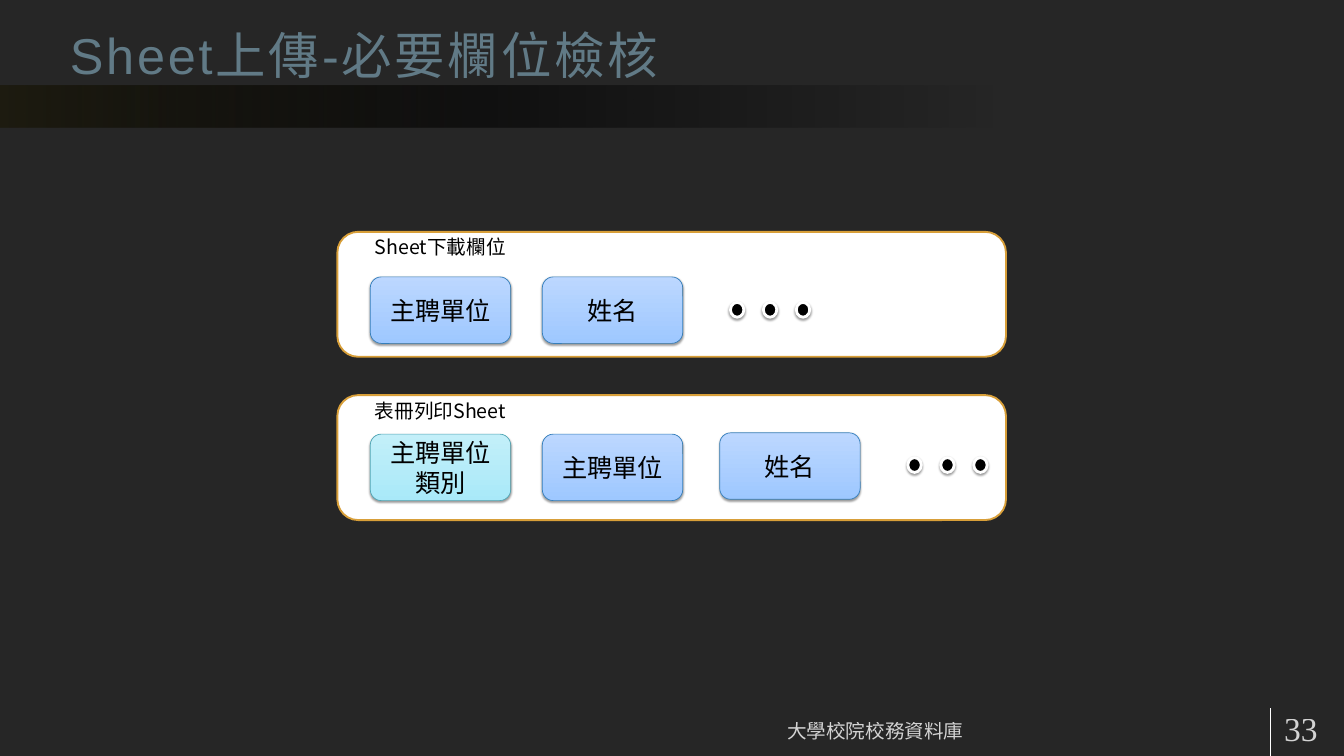
from lxml import etree
from pptx import Presentation
from pptx.dml.color import RGBColor
from pptx.enum.shapes import MSO_CONNECTOR, MSO_SHAPE
from pptx.enum.text import MSO_ANCHOR, MSO_AUTO_SIZE, PP_ALIGN
from pptx.oxml.ns import qn
from pptx.util import Emu, Pt

RECT, ROUND, OVAL = MSO_SHAPE.RECTANGLE, MSO_SHAPE.ROUNDED_RECTANGLE, MSO_SHAPE.OVAL
LINE = MSO_CONNECTOR.STRAIGHT
TOP, MID, LOW = MSO_ANCHOR.TOP, MSO_ANCHOR.MIDDLE, MSO_ANCHOR.BOTTOM
LEFT, MIDDLE = PP_ALIGN.LEFT, PP_ALIGN.CENTER
FIXED = MSO_AUTO_SIZE.NONE

SCALE = 9144
SANS, SERIF, HEAD = "Noto Sans CJK SC", "Times New Roman", "Arial"
WIDE, SLIM = (18, 9), (7, 4)
BLUE = ("9EC8FF", "BCD7FF", "357EB9")
CYAN = ("A9E9F9", "C3EFF9", "53A5B3")


def px(num):
    """Turn px into EMU."""
    return Emu(num * SCALE)


def tint(code):
    """Turn a hex string into a colour."""
    return RGBColor.from_string(code)


def node(root, tag, **attrs):
    """Add a drawing element below root."""
    return etree.SubElement(root, qn(tag), {key: str(val) for key, val in attrs.items()})


def put(item, vals):
    """Set each attribute of item from a dict."""
    for key, val in vals.items():
        setattr(item, key, val)


class Deck:
    """Hold the style and the current slide."""

    def __init__(self, wide, high, back):
        """Start a deck with one title-only slide."""
        self.file = Presentation()
        put(self.file, {"slide_width": px(wide), "slide_height": px(high)})
        self.page = self.file.slides.add_slide(self.file.slide_layouts[5])
        self.page.background.fill.solid()
        self.page.background.fill.fore_color.rgb = tint(back)

    def letter(self, shape, text, size, font, color, anchor=MID, align=MIDDLE, pad=SLIM, alpha=100, space=0):
        """Put styled text into a shape."""
        frame = shape.text_frame
        side, edge = map(px, pad)
        frame.text = text
        put(frame, {"word_wrap": True, "auto_size": FIXED, "vertical_anchor": anchor,
                    "margin_left": side, "margin_right": side,
                    "margin_top": edge, "margin_bottom": edge})
        for para in frame.paragraphs:
            para.alignment = align
            for run in para.runs:
                put(run.font, {"size": Pt(size), "name": font})
                run.font.color.rgb = tint(color)
                props = run.font._element
                node(props, "a:ea", typeface=SANS)
                if space:
                    props.set("spc", str(space * 100))
                if alpha < 100:
                    node(props.find(".//" + qn("a:srgbClr")), "a:alpha", val=alpha * 1000)

    def title(self, area, text, **style):
        """Place and fill the title."""
        shape = self.page.shapes.title
        put(shape, dict(zip(("left", "top", "width", "height"), map(px, area))))
        self.letter(shape, text, **style)

    def label(self, area, text, **style):
        """Add a text box."""
        self.letter(self.page.shapes.add_textbox(*map(px, area)), text, **style)

    def shape(self, kind, area, fill=None, line=None, width=1):
        """Add a preset shape without shadow."""
        shape = self.page.shapes.add_shape(kind, *map(px, area))
        shape.shadow.inherit = False
        if fill:
            shape.fill.solid()
            shape.fill.fore_color.rgb = tint(fill)
        if line:
            shape.line.color.rgb = tint(line)
            shape.line.width = Pt(width)
        else:
            shape.line.fill.background()
        return shape

    def blend(self, shape, stops, angle):
        """Fill a shape with gradient stops of place, colour and alpha."""
        shape.fill.gradient()
        shape.fill.gradient_angle = angle
        group = shape._element.spPr.find(".//" + qn("a:gsLst"))
        for stop in list(group):
            group.remove(stop)
        for place, code, alpha in stops:
            stop = node(group, "a:gs", pos=place * 1000)
            node(node(stop, "a:srgbClr", val=code), "a:alpha", val=alpha * 1000)

    def shade(self, shape):
        """Cast a soft shadow straight down."""
        group = shape._element.spPr.find(qn("a:effectLst"))
        cast = node(group, "a:outerShdw", blurRad=30000, dist=20320, dir=5400000, rotWithShape=0)
        node(node(cast, "a:srgbClr", val="000000"), "a:alpha", val=38000)

    def band(self, area, stops):
        """Add a fading band."""
        self.blend(self.shape(RECT, area), stops, 0)

    def rule(self, left, top, right, low, color, width):
        """Add a thin line."""
        line = self.page.shapes.add_connector(LINE, *map(px, (left, top, right, low)))
        line.line.color.rgb = tint(color)
        line.line.width = Pt(width)
        node(line._element.spPr, "a:effectLst")

    def field(self, left, top, text, hues):
        """Add a column box."""
        low, high, edge = hues
        box = self.shape(ROUND, (left, top, 209, 99), None, edge, 0.75)
        self.blend(box, ((0, low, 100), (100, high, 100)), 90)
        self.shade(box)
        self.letter(box, text, 27, SANS, "000000")

    def dots(self, left, top):
        """Add three dots for further columns."""
        for step in range(3):
            self.shade(self.shape(OVAL, (left + 49 * step, top, 20, 22), "000000", "FFFFFF", 3))

    def panel(self, top, text, drop, fields, dots):
        """Add a panel with its label, column boxes and dots."""
        self.shape(ROUND, (502, top, 995, 186), "FFFFFF", "D89F39", 2)
        for left, gap, name, hues in fields:
            self.field(left, top + gap, name, hues)
        self.dots(dots[0], top + dots[1])
        self.label((551, top + drop, 273, 43), text, size=21, font=SANS,
                   color="000000", anchor=TOP, align=LEFT)


def main():
    """Build and save the slide."""
    deck = Deck(2000, 1125, "262626")
    deck.band((0, 127, 2000, 63), ((0, "1E1C11", 100), (39, "000000", 54), (74, "000000", 0)))
    deck.rule(1890, 1054, 1890, 1125, "FFFFFF", 0.75)
    deck.title((86, 0, 1800, 135), "Sheet上傳-必要欄位檢核", size=54, font=HEAD,
               color="617A86", anchor=LOW, align=LEFT, pad=WIDE, space=3)
    foot = {"font": SERIF, "color": "FFFFFF", "pad": WIDE, "alpha": 80}
    deck.label((716, 1054, 1173, 60), "大學校院校務資料庫", size=21, anchor=LOW, **foot)
    deck.label((1893, 1054, 115, 60), "33", size=36, align=LEFT, **foot)
    deck.panel(345, "Sheet下載欄位", 0,
               ((551, 67, "主聘單位", BLUE), (807, 67, "姓名", BLUE)), (1087, 105))
    deck.panel(588, "表冊列印Sheet", 2,
               ((551, 58, "主聘單位\n類別", CYAN), (807, 58, "主聘單位", BLUE),
                (1071, 56, "姓名", BLUE)), (1351, 93))
    deck.file.save("out.pptx")


if __name__ == "__main__":
    main()
